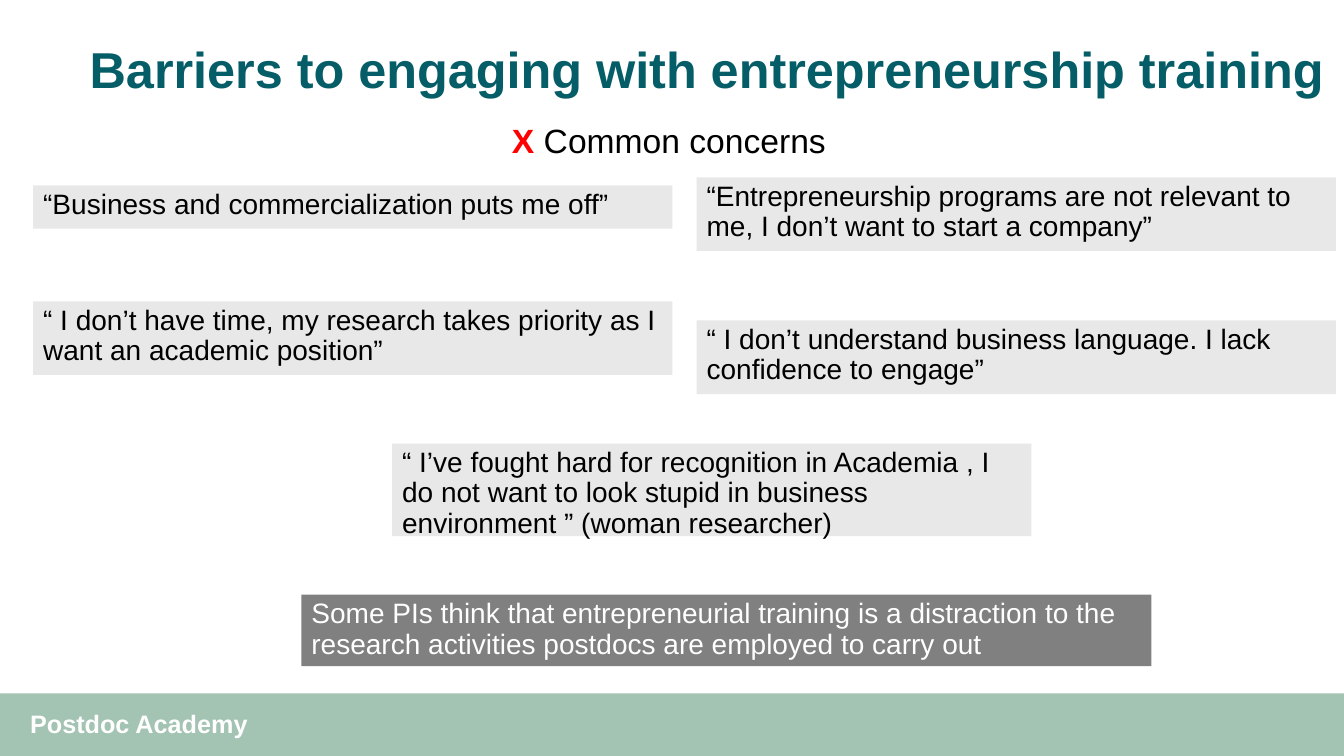
from dataclasses import dataclass

from lxml import etree
from pptx import Presentation
from pptx.dml.color import RGBColor
from pptx.enum.shapes import MSO_SHAPE
from pptx.enum.text import MSO_ANCHOR, MSO_AUTO_SIZE, PP_ALIGN
from pptx.oxml.ns import qn
from pptx.util import Inches, Pt

RECTANGLE = MSO_SHAPE.RECTANGLE
TOP, MIDDLE = MSO_ANCHOR.TOP, MSO_ANCHOR.MIDDLE
LEFT = PP_ALIGN.LEFT
NO_AUTOFIT = MSO_AUTO_SIZE.NONE


@dataclass(frozen=True)
class Theme:
    font: str = "Arial"
    teal: str = "055D67"
    sage: str = "85AF9A"
    quote_fill: str = "E8E8E8"
    remark_fill: str = "808080"
    black: str = "000000"
    white: str = "FFFFFF"
    red: str = "FF0000"
    title_size: int = 36
    heading_size: int = 24
    body_size: int = 20
    footer_size: int = 18
    footer_opacity: int = 75
    tight_lines: float = 0.9


THEME = Theme()
SLIDE_WIDTH, SLIDE_HEIGHT = 13.33, 7.5
LEFT_COLUMN, RIGHT_COLUMN, QUOTE_WIDTH = 0.33, 6.91, 6.34

QUOTES = [
    (LEFT_COLUMN, 1.84, 0.43, "“Business and commercialization puts me off”"),
    (RIGHT_COLUMN, 1.76, 0.73,
     "“Entrepreneurship programs are not relevant to me, I don’t want to start a company”"),
    (LEFT_COLUMN, 2.99, 0.73,
     "“ I don’t have time, my research takes priority as I want an academic position”"),
    (RIGHT_COLUMN, 3.18, 0.73,
     "“ I don’t understand business language. I lack confidence to engage”"),
    (3.89, 4.4, 0.92,
     "“ I’ve fought hard for recognition in Academia , I do not want to look stupid "
     "in business environment ” (woman researcher)"),
]
REMARK = ("Some PIs think that entrepreneurial training is a distraction to the "
          "research activities postdocs are employed to carry out")


def write(holder, runs, size, anchor=TOP, line_spacing=1.0):
    frame = holder.text_frame
    frame_format = {
        "word_wrap": True, "auto_size": NO_AUTOFIT, "vertical_anchor": anchor,
        "margin_left": Inches(0.1), "margin_right": Inches(0.1),
        "margin_top": Inches(0.05), "margin_bottom": Inches(0.05),
    }
    for name, value in frame_format.items():
        setattr(frame, name, value)
    paragraph = frame.paragraphs[0]
    paragraph.alignment = LEFT
    paragraph.line_spacing = line_spacing
    for words, color, bold in runs:
        run = paragraph.add_run()
        run.text = words
        for name, value in {"name": THEME.font, "size": Pt(size), "bold": bold}.items():
            setattr(run.font, name, value)
        run.font.color.rgb = RGBColor.from_string(color)


def add_label(slide, box, runs, size, **layout):
    label = slide.shapes.add_textbox(*map(Inches, box))
    write(label, runs, size, **layout)


def add_panel(slide, box, fill):
    panel = slide.shapes.add_shape(RECTANGLE, *map(Inches, box))
    panel.shadow.inherit = False
    panel.fill.solid()
    panel.fill.fore_color.rgb = RGBColor.from_string(fill)
    panel.line.fill.background()
    return panel


def add_statement(slide, box, words, fill, color):
    statement = add_panel(slide, box, fill)
    write(statement, [(words, color, False)], THEME.body_size,
          line_spacing=THEME.tight_lines)


def add_footer(slide, box):
    left, top, _, _ = box
    band = add_panel(slide, box, THEME.sage)
    tint = next(band.fill._xPr.iter(qn("a:srgbClr")))
    etree.SubElement(tint, qn("a:alpha"), val=str(THEME.footer_opacity * 1000))
    add_label(slide, (left + 0.2, top + 0.1, 2.65, 0.4),
              [("Postdoc Academy", THEME.white, True)], THEME.footer_size)


def add_header(slide, box):
    left, top, width, height = box
    add_label(slide, box,
              [("Barriers to engaging with entrepreneurship training", THEME.teal, True)],
              THEME.title_size, anchor=MIDDLE, line_spacing=THEME.tight_lines)
    add_label(slide, (left + 4.19, top + 0.94, 3.87, 0.5),
              [("X ", THEME.red, True), ("Common concerns", THEME.black, False)],
              THEME.heading_size)


def add_concerns(slide):
    for left, top, height, words in QUOTES:
        add_statement(slide, (left, top, QUOTE_WIDTH, height), words,
                      THEME.quote_fill, THEME.black)
    add_statement(slide, (2.99, 5.9, 8.43, 0.71), REMARK,
                  THEME.remark_fill, THEME.white)


def main():
    deck = Presentation()
    deck.slide_width, deck.slide_height = Inches(SLIDE_WIDTH), Inches(SLIDE_HEIGHT)
    slide = deck.slides.add_slide(deck.slide_layouts[6])
    add_footer(slide, (0, 6.88, SLIDE_WIDTH, 0.62))
    add_header(slide, (0.79, 0.2, 12.55, 1.04))
    add_concerns(slide)
    deck.save("out.pptx")


if __name__ == "__main__":
    main()
